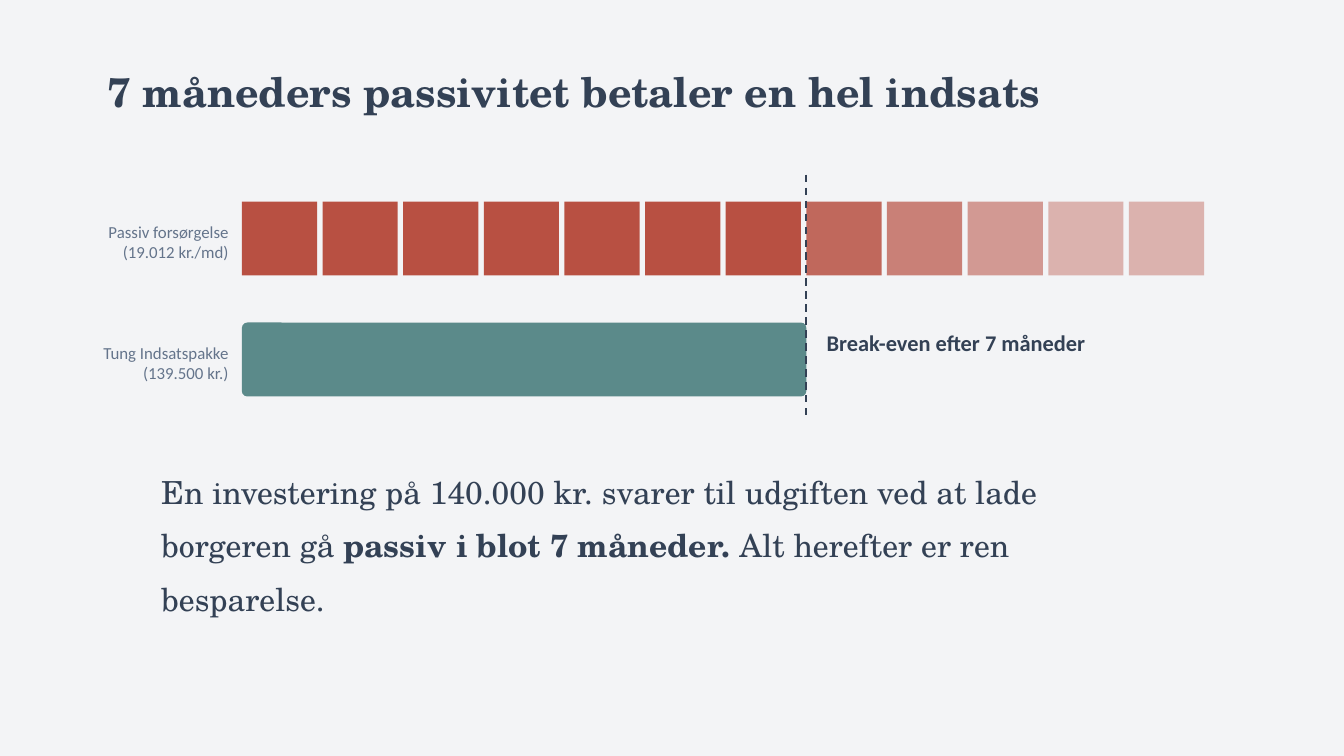
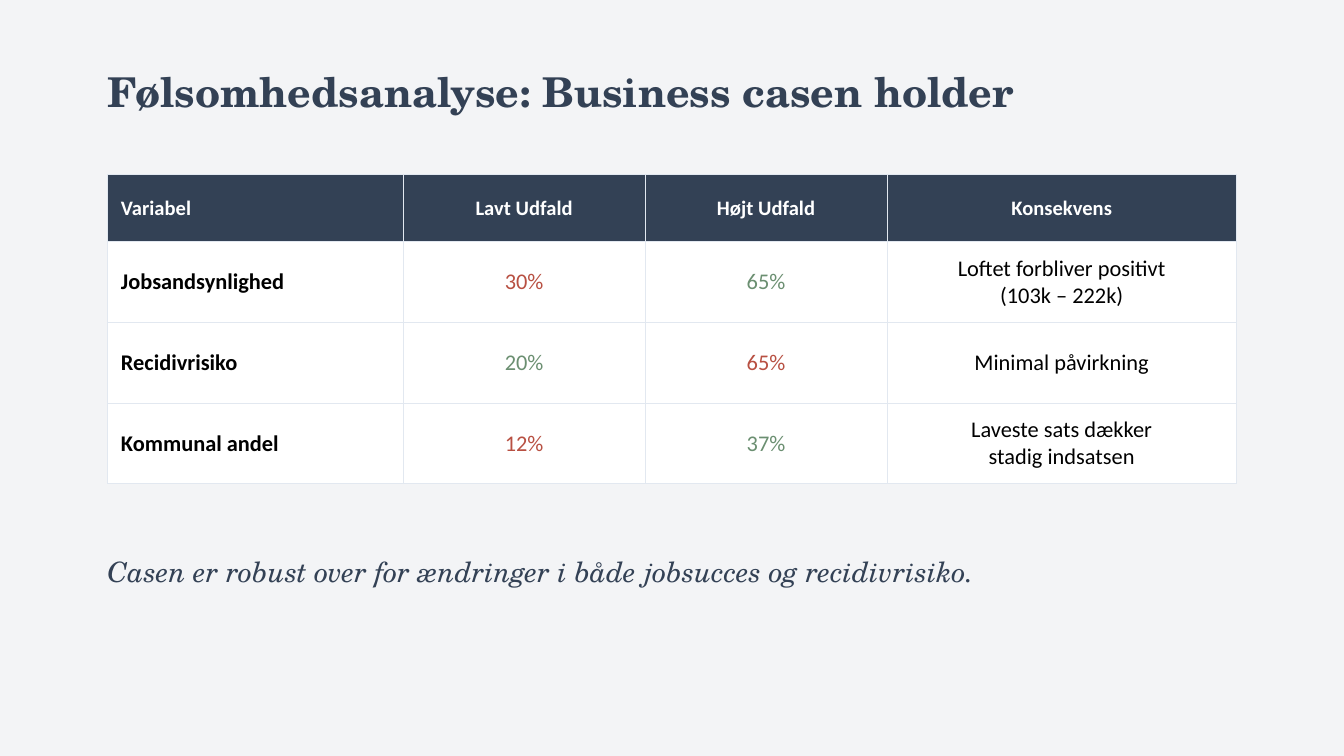
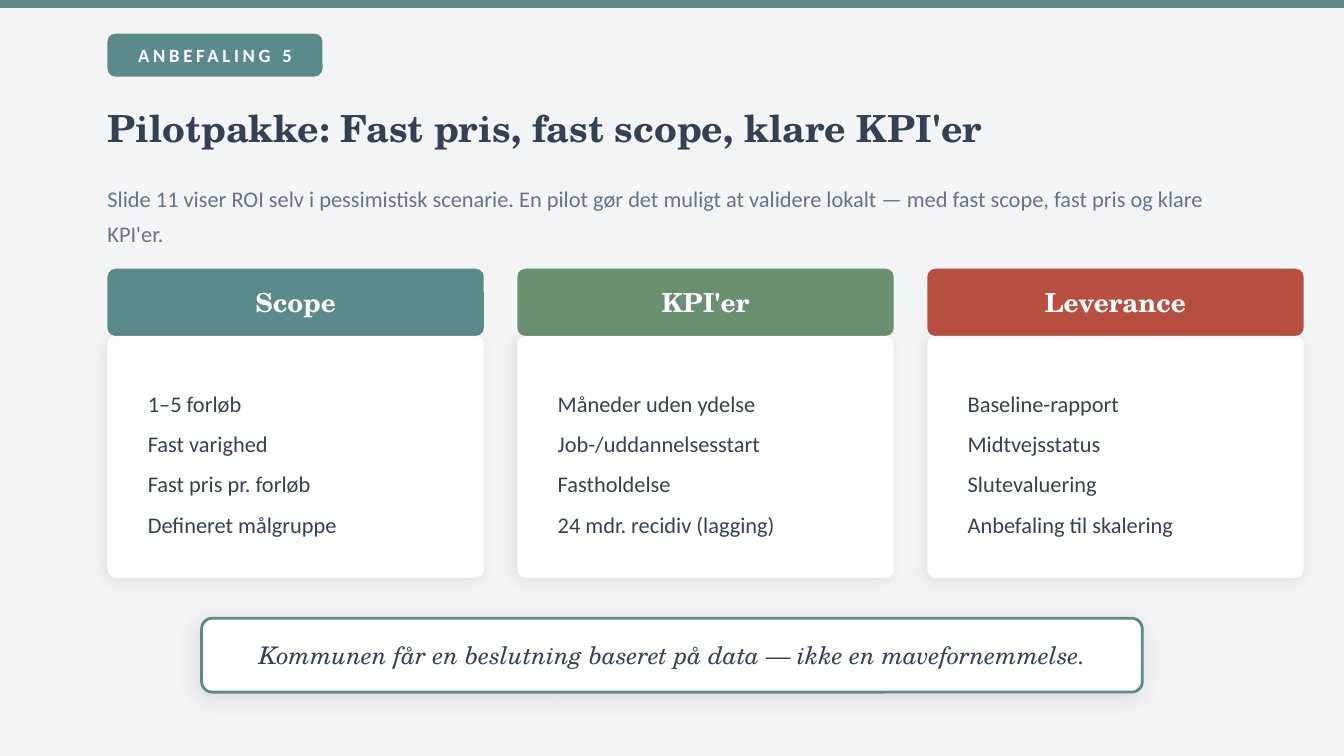
from lxml import etree
from pptx import Presentation
from pptx.dml.color import RGBColor
from pptx.enum.dml import MSO_LINE
from pptx.enum.shapes import MSO_CONNECTOR, MSO_SHAPE
from pptx.enum.text import MSO_ANCHOR, MSO_AUTO_SIZE, PP_ALIGN
from pptx.oxml.ns import qn
from pptx.util import Pt

LEFT, CENTER, RIGHT = PP_ALIGN.LEFT, PP_ALIGN.CENTER, PP_ALIGN.RIGHT
MIDDLE, NO_FIT = MSO_ANCHOR.MIDDLE, MSO_AUTO_SIZE.NONE
RECT, ROUNDED = MSO_SHAPE.RECTANGLE, MSO_SHAPE.ROUNDED_RECTANGLE
STRAIGHT, DASH = MSO_CONNECTOR.STRAIGHT, MSO_LINE.DASH
TITLE_ONLY = 5

COLORS = {
    "page": "F3F4F6", "ink": "334155", "muted": "64748B", "teal": "5B8A8A",
    "green": "6B8F71", "red": "B85042", "white": "FFFFFF", "black": "000000",
    "border": "E2E8F0",
}
SERIF, SANS = "TeX Gyre Schola", "Calibri"

# Text styles shared by the slides
TITLE = {"name": SERIF, "size": 22, "color": "ink", "bold": True}
STATEMENT = {"name": SERIF, "size": 17, "color": "ink"}
QUOTE = {"name": SERIF, "size": 15, "color": "ink", "italic": True}
CARD_HEAD = {"name": SERIF, "size": 14, "color": "white", "bold": True}
BODY = {"name": SANS, "size": 12, "color": "ink"}
AXIS = {"name": SANS, "size": 9, "color": "muted"}
BADGE = {"name": SANS, "size": 10, "color": "white", "bold": True}
TABLE_HEAD = {"name": SANS, "size": 11, "color": "white", "bold": True}

# Page grid in points
WIDTH, HEIGHT = 720, 405
MARGIN, CONTENT = 57.6, 604.8


def rgb(name):
    return RGBColor.from_string(COLORS[name])


def place(*lengths):
    return [Pt(length) for length in lengths]


class SlideBuilder:
    def __init__(self):
        self.deck = Presentation()
        self.deck.slide_width, self.deck.slide_height = place(WIDTH, HEIGHT)
        background = self.deck.slide_master.background.fill
        background.solid()
        background.fore_color.rgb = rgb("page")
        self.page = None

    def new_page(self, title, top=28.8, height=39.6, size=22):
        layout = self.deck.slide_layouts[TITLE_ONLY]
        self.page = self.deck.slides.add_slide(layout)
        box = self.page.shapes.title
        box.left, box.top, box.width, box.height = place(MARGIN, top, CONTENT, height)
        self.fill_box(box, [title], {**TITLE, "size": size})

    def set_text(self, frame, paragraphs, style, align=LEFT, line_spacing=1.0, tracking=0):
        """Each paragraph is a string or a list of (text, style changes)."""
        for number, content in enumerate(paragraphs):
            para = frame.add_paragraph() if number else frame.paragraphs[0]
            para.alignment, para.line_spacing = align, line_spacing
            para.space_before = para.space_after = Pt(0)
            spans = [(content, {})] if isinstance(content, str) else content
            for text, changes in spans:
                span = para.add_run()
                span.text = text
                for name, value in {**style, **changes}.items():
                    if name == "color":
                        span.font.color.rgb = rgb(value)
                    else:
                        setattr(span.font, name, Pt(value) if name == "size" else value)
                if tracking:
                    span.font._element.set("spc", str(tracking * 100))

    def fill_box(self, box, paragraphs, style, **layout):
        settings = {"word_wrap": True, "auto_size": NO_FIT, "vertical_anchor": MIDDLE,
                    "margin_left": 0, "margin_right": 0, "margin_top": 0, "margin_bottom": 0}
        for name, value in settings.items():
            setattr(box.text_frame, name, value)
        self.set_text(box.text_frame, paragraphs, style, **layout)

    def text(self, at, paragraphs, style, **layout):
        box = self.page.shapes.add_textbox(*place(*at))
        self.fill_box(box, paragraphs, style, **layout)

    def panel(self, at, color, radius=0, opacity=100, outline=None, shadow=None):
        shape = self.page.shapes.add_shape(ROUNDED if radius else RECT, *place(*at))
        if radius:
            shape.adjustments[0] = radius / min(at[2:])
        shape.fill.solid()
        shape.fill.fore_color.rgb = rgb(color)
        if opacity < 100:
            tint = shape.element.spPr.find(qn("a:solidFill"))[0]
            etree.SubElement(tint, qn("a:alpha"), val=str(opacity * 1000))
        if outline:
            shape.line.color.rgb = rgb(outline)
            shape.line.width = Pt(1.5)
        else:
            shape.line.fill.background()
        shape.shadow.inherit = False
        if shadow:
            self.cast_shadow(shape, *shadow)

    def cast_shadow(self, shape, opacity, blur, distance):
        effects = shape.element.spPr.find(qn("a:effectLst"))
        outer = etree.SubElement(
            effects, qn("a:outerShdw"), blurRad=str(Pt(blur)), dist=str(Pt(distance)),
            dir=str(135 * 60000), algn="bl", rotWithShape="0")
        tint = etree.SubElement(outer, qn("a:srgbClr"), val=COLORS["black"])
        etree.SubElement(tint, qn("a:alpha"), val=str(opacity * 1000))

    def dashed_line(self, start, end, color):
        line = self.page.shapes.add_connector(STRAIGHT, *place(*start, *end))
        line.line.color.rgb = rgb(color)
        line.line.width, line.line.dash_style = Pt(1), DASH
        etree.SubElement(line._element.spPr, qn("a:effectLst"))

    def table(self, left, top, widths, heights, rows):
        """Each cell is (paragraphs, style, fill)."""
        frame = self.page.shapes.add_table(
            len(heights), len(widths), *place(left, top, sum(widths), sum(heights)))
        grid = frame.table
        grid.first_row = grid.horz_banding = False
        for column, width in zip(grid.columns, widths):
            column.width = Pt(width)
        for row, height in zip(grid.rows, heights):
            row.height = Pt(height)
        for row, contents in zip(grid.rows, rows):
            for number, (cell, content) in enumerate(zip(row.cells, contents)):
                paragraphs, style, fill = content
                self.set_text(cell.text_frame, paragraphs, style, CENTER if number else LEFT)
                cell.vertical_anchor = MIDDLE
                self.border(cell)
                cell.fill.solid()
                cell.fill.fore_color.rgb = rgb(fill)

    def border(self, cell):
        properties = cell._tc.get_or_add_tcPr()
        for side in ("a:lnL", "a:lnR", "a:lnT", "a:lnB"):
            edge = etree.SubElement(properties, qn(side), w=str(Pt(0.5)))
            paint = etree.SubElement(edge, qn("a:solidFill"))
            etree.SubElement(paint, qn("a:srgbClr"), val=COLORS["border"])


def break_even_slide(builder):
    builder.new_page("7 måneders passivitet betaler en hel indsats")
    bar_left, bar_height, month_step = 129.6, 39.6, 43.2
    passive_top, effort_top = 108, 172.8
    break_even = bar_left + 7 * month_step

    # Twelve months of passive support, fading after break-even
    builder.text((7.2, passive_top - 3.6, 115.2, 50.4),
                 ["Passiv forsørgelse", "(19.012 kr./md)"], AXIS, align=RIGHT)
    for month, opacity in enumerate([100] * 7 + [85, 70, 55, 40, 40]):
        builder.panel((bar_left + month * month_step, passive_top, 40.32, bar_height),
                      "red", opacity=opacity)

    # Cost of the effort
    builder.text((7.2, effort_top - 3.6, 115.2, 50.4),
                 ["Tung Indsatspakke", "(139.500 kr.)"], AXIS, align=RIGHT)
    builder.panel((bar_left, effort_top, break_even - bar_left, bar_height), "teal", radius=2.88)

    # Break-even marker and conclusion
    builder.text((break_even + 10.8, effort_top - 3.6, 180, 28.8),
                 ["Break-even efter 7 måneder"], {**BODY, "bold": True})
    builder.dashed_line((break_even, 93.6), (break_even, 223.2), "ink")
    builder.text((86.4, 252, 518.4, 72), [[
        ("En investering på 140.000 kr. svarer til udgiften ved at lade borgeren gå ", {}),
        ("passiv i blot 7 måneder.", {"bold": True}),
        (" Alt herefter er ren besparelse.", {}),
    ]], STATEMENT, line_spacing=1.4)


def sensitivity_slide(builder):
    builder.new_page("Følsomhedsanalyse: Business casen holder")
    headings = ["Variabel", "Lavt Udfald", "Højt Udfald", "Konsekvens"]
    variables = [
        ("Jobsandsynlighed", "30%", "red", "65%", "green",
         ["Loftet forbliver positivt", "(103k – 222k)"]),
        ("Recidivrisiko", "20%", "green", "65%", "red", ["Minimal påvirkning"]),
        ("Kommunal andel", "12%", "red", "37%", "green",
         ["Laveste sats dækker", "stadig indsatsen"]),
    ]
    plain = {**BODY, "color": "black", "bold": False}
    rows = [[([heading], TABLE_HEAD, "ink") for heading in headings]]
    for name, low, low_color, high, high_color, consequence in variables:
        rows.append([
            ([name], {**plain, "bold": True}, "white"),
            ([low], {**plain, "color": low_color}, "white"),
            ([high], {**plain, "color": high_color}, "white"),
            (consequence, plain, "white"),
        ])
    builder.table(MARGIN, 93.6, [158.4, 129.6, 129.6, 187.2], [36] + [43.2] * 3, rows)
    builder.text((MARGIN, 288, CONTENT, 36),
                 ["Casen er robust over for ændringer i både jobsucces og recidivrisiko."], QUOTE)


def pilot_slide(builder):
    builder.new_page("Pilotpakke: Fast pris, fast scope, klare KPI'er", top=50.4, height=36, size=20)

    # Top band, badge and introduction
    builder.panel((0, 0, WIDTH, 4.32), "teal")
    badge = (MARGIN, 18, 115.2, 23.04)
    builder.panel(badge, "teal", radius=4.32)
    builder.text(badge, ["ANBEFALING 5"], BADGE, align=CENTER, tracking=2)
    builder.text((MARGIN, 97.2, CONTENT, 32.4), [
        "Slide 11 viser ROI selv i pessimistisk scenarie. En pilot gør det muligt at "
        "validere lokalt — med fast scope, fast pris og klare KPI'er."
    ], {**BODY, "color": "muted"}, line_spacing=1.3)

    # Three cards
    cards = [
        ("Scope", "teal",
         ["1–5 forløb", "Fast varighed", "Fast pris pr. forløb", "Defineret målgruppe"]),
        ("KPI'er", "green",
         ["Måneder uden ydelse", "Job-/uddannelsesstart", "Fastholdelse",
          "24 mdr. recidiv (lagging)"]),
        ("Leverance", "red",
         ["Baseline-rapport", "Midtvejsstatus", "Slutevaluering", "Anbefaling til skalering"]),
    ]
    card_width, card_gap = 201.6, 18
    for number, (heading, color, points) in enumerate(cards):
        left = MARGIN + number * (card_width + card_gap)
        header = (left, 144, card_width, 36)
        builder.panel(header, color, radius=4.32)
        builder.text(header, [heading], CARD_HEAD, align=CENTER)
        builder.panel((left, 180, card_width, 129.6), "white", radius=4.32, shadow=(8, 8, 2))
        builder.text((left + 21.6, 190.8, card_width - 43.2, 108), points, BODY, line_spacing=1.5)

    # Closing statement
    builder.panel((108, 331.2, 504, 39.6), "white", radius=5.76, outline="teal", shadow=(10, 12, 3))
    builder.text((129.6, 331.2, 460.8, 39.6),
                 ["Kommunen får en beslutning baseret på data — ikke en mavefornemmelse."],
                 {**QUOTE, "size": 13}, align=CENTER)


def main():
    builder = SlideBuilder()
    break_even_slide(builder)
    sensitivity_slide(builder)
    pilot_slide(builder)
    builder.deck.save("out.pptx")


if __name__ == "__main__":
    main()
